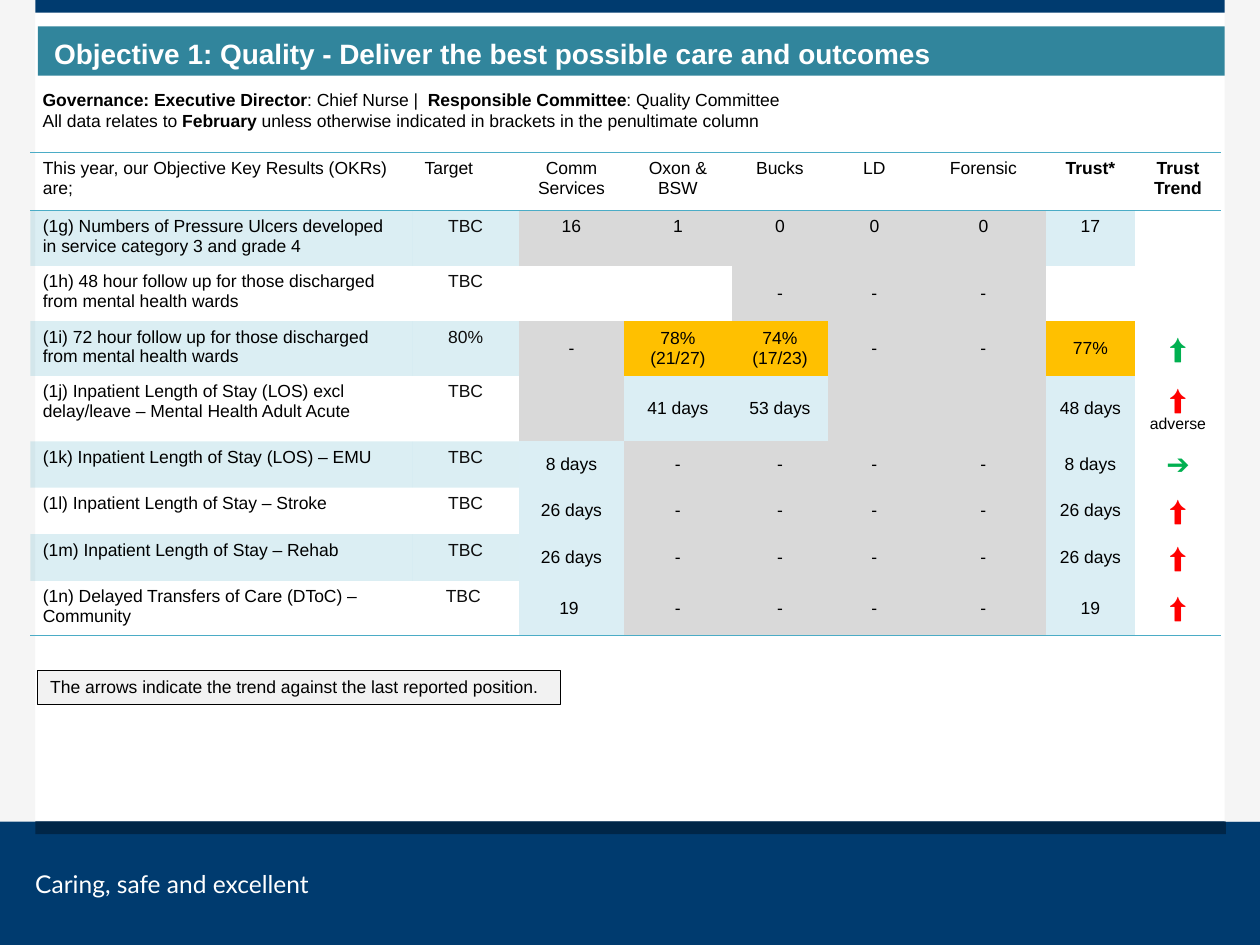
from lxml import etree
from pptx import Presentation
from pptx.dml.color import RGBColor
from pptx.enum import shapes, text
from pptx.oxml import ns
from pptx.util import Inches, Pt

HUES = {
    "navy": "003B6F", "dark": "002648", "side": "F5F5F5", "title": "31859C",
    "line": "4BACC6", "grey": "D9D9D9", "pale": "DBEEF4", "amber": "FFC000",
    "note": "F2F2F2", "white": "FFFFFF", "black": "000000", "soft": "0D0D0D",
    "green": "00B050", "red": "FF0000",
}
MID, TOP = text.MSO_ANCHOR.MIDDLE, text.MSO_ANCHOR.TOP
CENTER, LEFT = text.PP_ALIGN.CENTER, text.PP_ALIGN.LEFT


def rgb(name):
    return RGBColor.from_string(HUES[name])


def write(par, words, hue="black", **form):
    """Add a run; form holds font values that differ from 10 pt Arial."""
    run = par.add_run()
    run.text = words
    run.font.color.rgb = rgb(hue)
    for key, val in {"name": "Arial", "size": Pt(10), "bold": False, **form}.items():
        setattr(run.font, key, val)


deck = Presentation()
deck.slide_width, deck.slide_height = Inches(10), Inches(7.5)
slide = deck.slides.add_slide(deck.slide_layouts[5])

# Frame: side panels, footer and bars
for x, y, w, h, hue in [
    (0, 0, 0.28, 6.52, "side"),
    (0, 6.52, 10, 0.98, "navy"),
    (0.28, 6.52, 9.45, 0.1, "dark"),
    (0.28, 0, 9.45, 0.1, "navy"),
    (9.72, 0, 0.28, 6.52, "side"),
]:
    bar = slide.shapes.add_shape(
        shapes.MSO_SHAPE.RECTANGLE, Inches(x), Inches(y), Inches(w), Inches(h))
    bar.shadow.inherit = False
    bar.fill.solid()
    bar.fill.fore_color.rgb = rgb(hue)
    bar.line.fill.background()

# Footer motto
motto = slide.shapes.add_textbox(Inches(0.28), Inches(6.9), Inches(3.07), Inches(0.24))
frame = motto.text_frame
for side in ("left", "top", "right", "bottom"):
    setattr(frame, "margin_" + side, 0)
write(frame.paragraphs[0], "Caring, safe and excellent", "white", name="Lato", size=Pt(14))

# Title band
title = slide.shapes.title
title.left, title.top = Inches(0.3), Inches(0.21)
title.width, title.height = Inches(9.43), Inches(0.39)
title.fill.solid()
title.fill.fore_color.rgb = rgb("title")
frame = title.text_frame
for key, val in {
    "auto_size": text.MSO_AUTO_SIZE.NONE, "word_wrap": True, "vertical_anchor": MID,
    "margin_left": Inches(0.13), "margin_right": Inches(0.07),
    "margin_top": Inches(0.04), "margin_bottom": Inches(0.04),
}.items():
    setattr(frame, key, val)
par = frame.paragraphs[0]
par.alignment, par.line_spacing, par.space_after = LEFT, 1.15, Pt(7.5)
write(par, "Objective 1: Quality - Deliver the best possible care and outcomes",
      "white", size=Pt(16), bold=True)

# Results table: words, then one fill letter for each column
FILLS = {"g": "grey", "p": "pale", "a": "amber", "w": "white", "t": "line"}
UP, SIDE = "⬆", "➔"
ROWS = [
    (["This year, our Objective Key Results (OKRs) are;", "Target", "Comm Services",
      "Oxon & BSW", "Bucks", "LD", "Forensic", "Trust*", "Trust\nTrend"], "---------"),
    (["(1g) Numbers of Pressure Ulcers developed in service category 3 and grade 4",
      "TBC", "16", "1", "0", "0", "0", "17", ""], "ttgggggpw"),
    (["(1h) 48 hour follow up for those discharged from mental health wards",
      "TBC", "", "", "-", "-", "-", "", ""], "--wwgggww"),
    (["(1i) 72 hour follow up for those discharged from mental health wards",
      "80%", "-", "78% (21/27)", "74% (17/23)", "-", "-", "77%", UP], "ttgaaggaw"),
    (["(1j) Inpatient Length of Stay (LOS) excl delay/leave – Mental Health Adult Acute",
      "TBC", "", "41 days", "53 days", "", "", "48 days", UP + "\nadverse"], "--gppggpw"),
    (["(1k) Inpatient Length of Stay (LOS) – EMU",
      "TBC", "8 days", "-", "-", "-", "-", "8 days", SIDE], "ttpggggpw"),
    (["(1l) Inpatient Length of Stay – Stroke",
      "TBC", "26 days", "-", "-", "-", "-", "26 days", UP], "--pggggpw"),
    (["(1m) Inpatient Length of Stay – Rehab",
      "TBC", "26 days", "-", "-", "-", "-", "26 days", UP], "ttpggggpw"),
    (["(1n) Delayed Transfers of Care (DToC) – Community",
      "TBC ", "19 ", "-", "-", "-", "-", "19", UP], "--pggggpw"),
]
WIDTHS = [3.03, 0.85, 0.83, 0.86, 0.76, 0.74, 0.99, 0.71, 0.68]
HEIGHTS = [0.46, 0.44, 0.44, 0.43, 0.52, 0.36, 0.37, 0.37, 0.43]
GOOD = (3, 5)  # rows whose trend arrow is green

grid = slide.shapes.add_table(
    len(ROWS), len(WIDTHS), Inches(0.24), Inches(1.21), Inches(9.45), Inches(3.82)).table
grid.first_row = grid.horz_banding = False
style = grid._tbl.tblPr.find(ns.qn("a:tableStyleId"))
style.text = "{2D5ABB26-0587-4C30-8999-92F81FD0307C}"  # no style, no grid
for col, w in zip(grid.columns, WIDTHS):
    col.width = Inches(w)

for r, (words, fills) in enumerate(ROWS):
    grid.rows[r].height = Inches(HEIGHTS[r])
    for c, (word, mark) in enumerate(zip(words, fills)):
        cell = grid.cell(r, c)
        cell.vertical_anchor = MID if r > 1 and c > 1 else TOP
        props = cell._tc.get_or_add_tcPr()

        # Fill, translucent for the banded labels
        if mark == "-":
            cell.fill.background()
        else:
            cell.fill.solid()
            cell.fill.fore_color.rgb = rgb(FILLS[mark])
        if mark == "t":
            tone = props.find(".//" + ns.qn("a:srgbClr"))
            etree.SubElement(tone, ns.qn("a:alpha"), val="20000")

        # Rules around the header and under the last row
        edges = {0: ("lnB", "lnT"), len(ROWS) - 1: ("lnB",)}.get(r, ())
        for edge in edges:
            rule = etree.Element(ns.qn("a:" + edge), w=str(Pt(1)))
            ink = etree.SubElement(rule, ns.qn("a:solidFill"))
            etree.SubElement(ink, ns.qn("a:srgbClr"), val=HUES["line"])
            props.insert(0, rule)

        # Words
        for n, line in enumerate(word.split("\n") if word else []):
            frame = cell.text_frame
            par = frame.add_paragraph() if n else frame.paragraphs[0]
            par.alignment = LEFT if c == 0 or (r, c) == (0, 1) else CENTER
            if line in (UP, SIDE):
                write(par, line, "green" if r in GOOD else "red", size=Pt(16), bold=True)
            elif n and r:
                write(par, line, size=Pt(9))
            else:
                write(par, line, "soft" if r and c == 1 else "black", bold=r == 0 and c > 6)

# Governance lines: plain and bold runs
lead = slide.shapes.add_textbox(Inches(0.24), Inches(0.66), Inches(9.45), Inches(0.44))
frame = lead.text_frame
frame.word_wrap = True
for n, runs in enumerate([
    [("Governance: Executive Director", True), (": Chief Nurse |  ", False),
     ("Responsible Committee", True), (": Quality Committee", False)],
    [("All data relates to ", False), ("February ", True),
     ("unless otherwise indicated in brackets in the penultimate column", False)],
]):
    par = frame.add_paragraph() if n else frame.paragraphs[0]
    for words, bold in runs:
        write(par, words, bold=bold)

# Note on arrows
note = slide.shapes.add_textbox(Inches(0.3), Inches(5.32), Inches(4.15), Inches(0.27))
note.fill.solid()
note.fill.fore_color.rgb = rgb("note")
note.line.color.rgb = rgb("black")
note.line.width = Pt(0.75)
note.text_frame.word_wrap = True
write(note.text_frame.paragraphs[0],
      "The arrows indicate the trend against the last reported position.")

deck.save("out.pptx")
